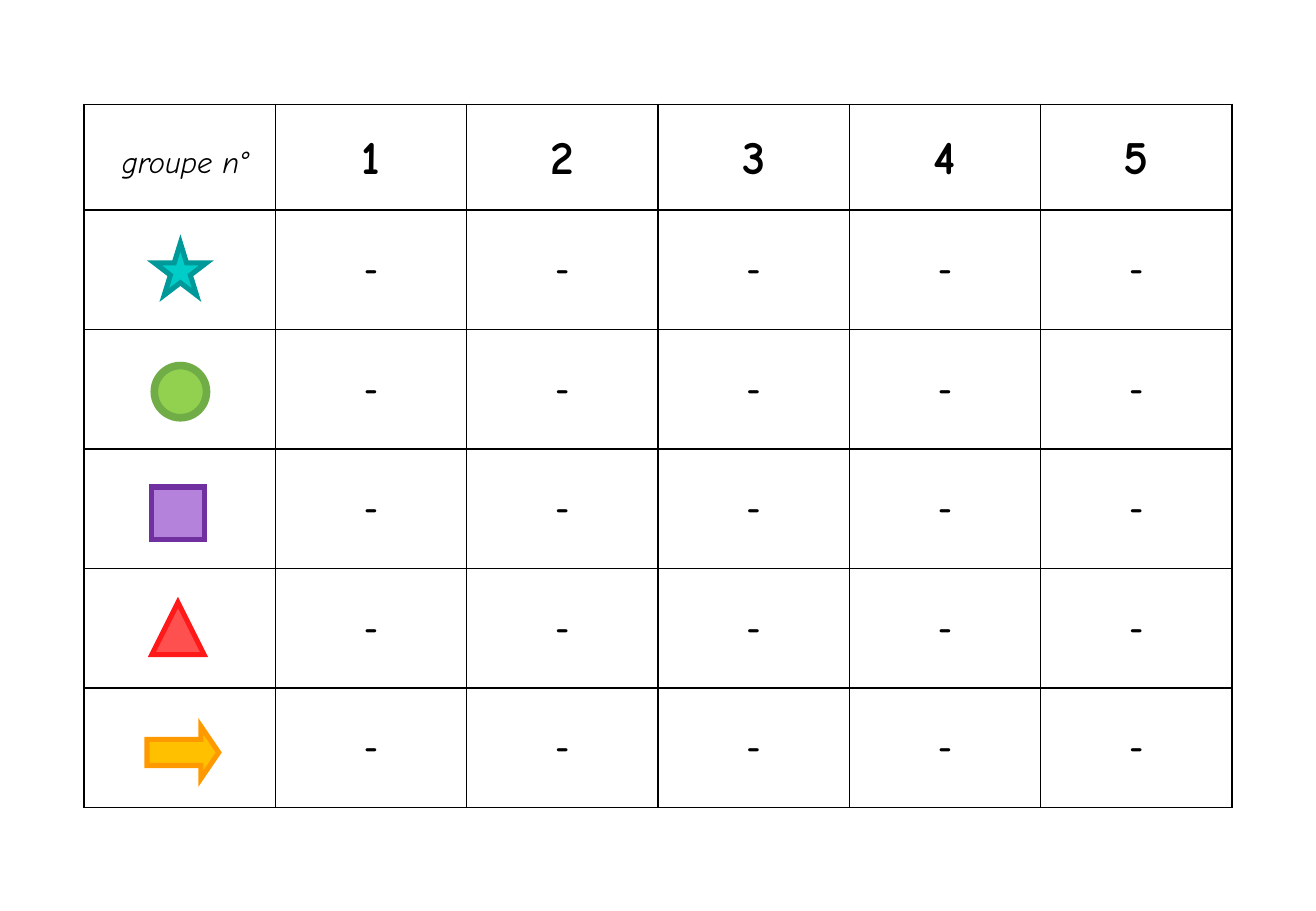
import pptx
import pptx.util
import pptx.dml.color
import pptx.enum.shapes
import pptx.enum.text
import pptx.oxml
import lxml.etree

Inches = pptx.util.Inches
Pt = pptx.util.Pt
SHAPE = pptx.enum.shapes.MSO_SHAPE
DRAWING = "http://schemas.openxmlformats.org/drawingml/2006/main"

COLORS = {
    "black": "000000", "white": "FFFFFF", "grey": "808080",
    "teal": "00CDC8", "dark teal": "009999",
    "green": "92D050", "dark green": "70AD47",
    "purple": "B482DA", "dark purple": "7030A0",
    "red": "FF5050", "dark red": "FF1919",
    "amber": "FFC000", "dark amber": "FF9900",
}


def rgb(name):
    return pptx.dml.color.RGBColor.from_string(COLORS[name])


def add_borders(cell):
    properties = cell._tc.get_or_add_tcPr()
    for position, side in enumerate(("lnL", "lnR", "lnT", "lnB")):
        border = pptx.oxml.parse_xml(
            f'<a:{side} xmlns:a="{DRAWING}" w="{Pt(1)}"><a:solidFill>'
            f'<a:srgbClr val="{COLORS["black"]}"/></a:solidFill></a:{side}>')
        properties.insert(position, border)


deck = pptx.Presentation()
deck.slide_width = Inches(10.83)
deck.slide_height = Inches(7.5)
page = deck.slides.add_slide(deck.slide_layouts[6])

headings = ["groupe n°", "1", "2", "3", "4", "5"]
size = len(headings)
table_height = 5.79
header_height = 0.87
grid = page.shapes.add_table(
    size, size, Inches(0.69), Inches(0.86), Inches(9.45), Inches(table_height)).table
grid.first_row = False
grid.horz_banding = False

for row_index, row in enumerate(grid.rows):
    is_header = row_index == 0
    row.height = Inches(header_height if is_header
                        else (table_height - header_height) / (size - 1))
    for column_index, cell in enumerate(row.cells):
        cell.fill.solid()
        cell.fill.fore_color.rgb = rgb("white")
        add_borders(cell)
        cell.vertical_anchor = pptx.enum.text.MSO_ANCHOR.MIDDLE
        if is_header:
            cell.margin_left = cell.margin_right = Inches(0.07)
            cell.margin_top = cell.margin_bottom = 0
        elif column_index == 0:
            continue
        para = cell.text_frame.paragraphs[0]
        para.alignment = pptx.enum.text.PP_ALIGN.CENTER
        if is_header and column_index == 0:
            spacer = para.add_run()
            spacer.text = " "
            spacer.font.name = "Calibri"
            spacer.font.size = Pt(28)
            spacer.font.bold = True
            spacer.font.color.rgb = rgb("grey")
            span = para.add_run()
            span.text = headings[0]
            span.font.size = Pt(18)
            span.font.italic = True
        else:
            span = para.add_run()
            span.text = headings[column_index] if is_header else "-"
            span.font.size = Pt(28 if is_header else 20)
            span.font.bold = True
            if is_header:
                para.line_spacing = 1.07
        span.font.name = "Comic Neue"
        span.font.color.rgb = rgb("black")

symbols = [
    (SHAPE.STAR_5_POINT, 1.27, 2, 0.43, "teal", 3),
    (SHAPE.OVAL, 1.27, 3.01, 0.43, "green", 4.5),
    (SHAPE.RECTANGLE, 1.25, 4.01, 0.43, "purple", 3),
    (SHAPE.ISOSCELES_TRIANGLE, 1.25, 4.96, 0.43, "red", 3),
    (SHAPE.RIGHT_ARROW, 1.21, 5.98, 0.59, "amber", 3),
]
for kind, left, top, width, color, line_width in symbols:
    symbol = page.shapes.add_shape(
        kind, Inches(left), Inches(top), Inches(width), Inches(0.43))
    symbol.shadow.inherit = False
    symbol.fill.solid()
    symbol.fill.fore_color.rgb = rgb(color)
    symbol.line.color.rgb = rgb("dark " + color)
    symbol.line.width = Pt(line_width)
    outline = symbol.line._get_or_add_ln()
    lxml.etree.SubElement(outline, f"{{{DRAWING}}}miter", lim="800000")
    if kind == SHAPE.RIGHT_ARROW:
        symbol.adjustments[0] = 0.5
        symbol.adjustments[1] = 0.34

deck.save("out.pptx")
